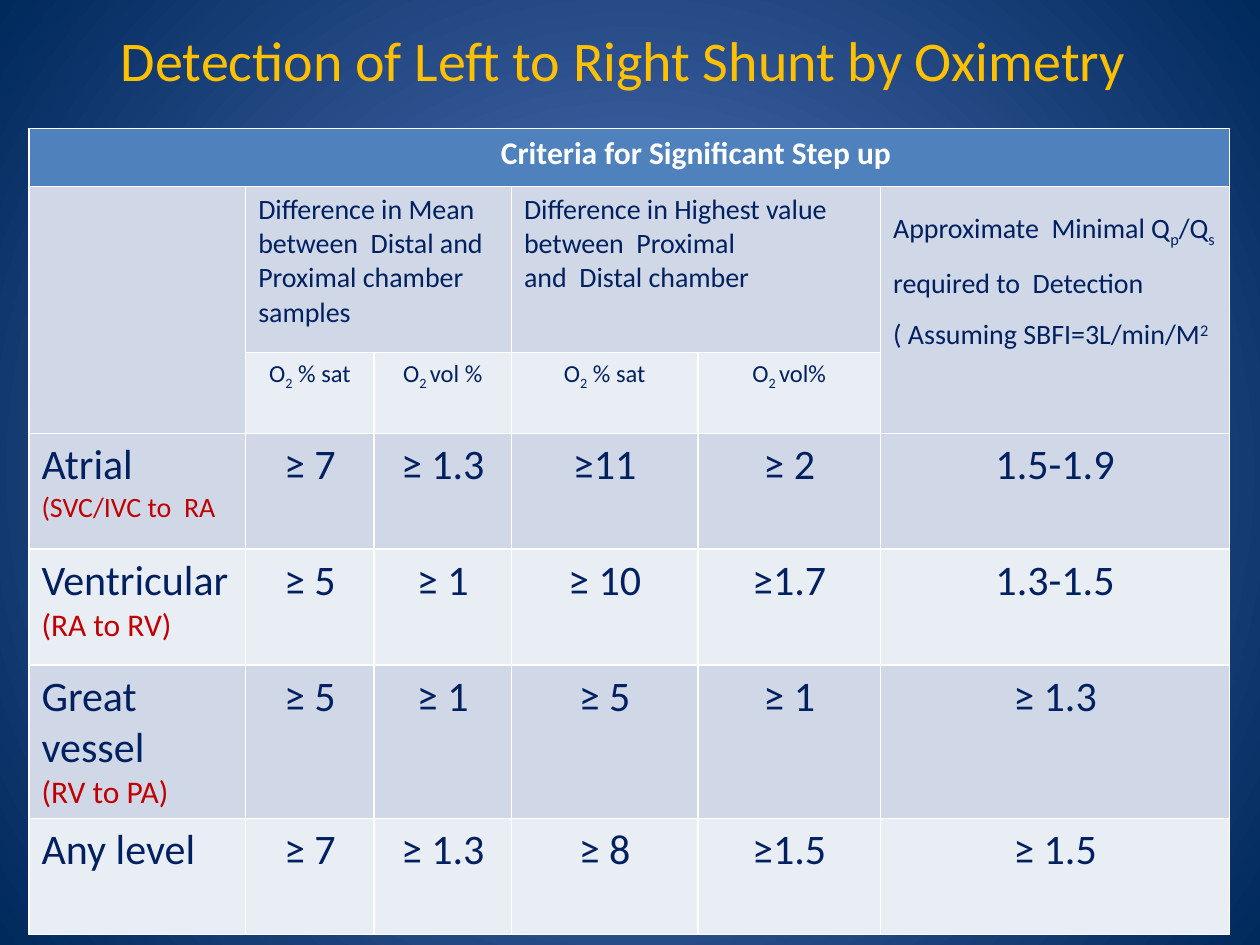
from typing import NamedTuple

from lxml import etree
from pptx import Presentation
from pptx import util as u
from pptx.dml.color import RGBColor
from pptx.enum import text as t
from pptx.oxml.ns import qn

NAVY, RED, GOLD, WHITE = "002060", "C00000", "FFC000", "FFFFFF"
BLUE, DARK, PALE = "4F81BD", "D0D8E8", "E9EDF4"
LEFT, MID = t.PP_ALIGN.LEFT, t.PP_ALIGN.CENTER
SHIFT = {"_": "-25000", "^": "30000"}
COLS = [1.72, 1.02, 1.09, 1.48, 1.45, 2.77]
ROWS = [0.46, 1.32, 0.64] + [0.92] * 4


class Head(NamedTuple):
    row: int
    col: int
    down: int
    across: int
    lines: list[str]
    gap: float = 1.0


class Level(NamedTuple):
    name: str
    path_note: str
    size: int
    values: list[str]


HEADS = [
    Head(1, 0, 2, 1, []),
    Head(1, 1, 1, 2, ["Difference in Mean between  Distal and Proximal chamber samples"]),
    Head(1, 3, 1, 2, ["Difference in Highest value between  Proximal",
                      "and  Distal chamber"]),
    Head(1, 5, 2, 1, ["Approximate  Minimal Q|_p|/Q|_s |required to  Detection",
                      "( Assuming SBFI=3L/min/M|^2"], 1.5),
]
UNITS = ["O|_2| % sat", "O|_2 |vol %", "O|_2| % sat", "O|_2 |vol%"]
LEVELS = [
    Level("Atrial", "(SVC/IVC to  RA", 16, ["≥ 7", "≥ 1.3", "≥11", "≥ 2", "1.5-1.9"]),
    Level("Ventricular", "(RA to RV)", 18, ["≥ 5", "≥ 1", "≥ 10", "≥1.7", "1.3-1.5"]),
    Level("Great vessel", "(RV to PA)", 18, ["≥ 5", "≥ 1", "≥ 5", "≥ 1", "≥ 1.3"]),
    Level("Any level", "", 18, ["≥ 7", "≥ 1.3", "≥ 8", "≥1.5", "≥ 1.5"]),
]


def rgb(code: str) -> RGBColor:
    return RGBColor.from_string(code)


def write(frame, line: str, *, size: int, color: str = NAVY, align=LEFT,
          bold: bool = False, gap: float = 1.0) -> None:
    """Add a paragraph; "|" parts runs, "_" lowers a run and "^" raises it."""
    para = frame.paragraphs[0]
    if para.runs:
        para = frame.add_paragraph()
    para.alignment, para.line_spacing = align, gap
    for part in line.split("|"):
        run = para.add_run()
        run.text = part.lstrip("_^")
        font = run.font
        font.name, font.size, font.bold = "Calibri", u.Pt(size), bold
        font.color.rgb = rgb(color)
        if part[0] in SHIFT:
            font._element.set("baseline", SHIFT[part[0]])


def paint(slide) -> None:
    """Give the slide a round gradient that is light in the centre."""
    fill = slide.background.fill
    fill.gradient()
    for stop, code in zip(fill.gradient_stops, ["5E7CC5", "00295C"]):
        stop.color.rgb = rgb(code)
    grad = next(slide.element.iter(qn("a:gradFill")))
    grad.remove(grad.find(qn("a:lin")))
    ring = etree.SubElement(grad, qn("a:path"), path="circle")
    etree.SubElement(ring, qn("a:fillToRect"),
                     {side: "50000" for side in "ltrb"})


def draw_table(slide) -> None:
    table = slide.shapes.add_table(
        len(ROWS), len(COLS), u.Inches(0.23), u.Inches(1.02),
        u.Inches(sum(COLS)), u.Inches(sum(ROWS))).table
    for col, width in zip(table.columns, COLS):
        col.width = u.Inches(width)
    for i, (row, height) in enumerate(zip(table.rows, ROWS)):
        row.height = u.Inches(height)
        for cell in row.cells:
            cell.fill.solid()
            cell.fill.fore_color.rgb = rgb(BLUE if i == 0 else DARK if i % 2 else PALE)

    top = table.cell(0, 0)
    top.merge(table.cell(0, len(COLS) - 1))
    top.margin_left = u.Inches(1.16)
    write(top.text_frame, "Criteria for Significant Step up",
          size=18, color=WHITE, align=MID, bold=True)

    for head in HEADS:
        cell = table.cell(head.row, head.col)
        cell.merge(table.cell(head.row + head.down - 1, head.col + head.across - 1))
        for line in head.lines:
            write(cell.text_frame, line, size=16, gap=head.gap)
    for j, unit in enumerate(UNITS, 1):
        write(table.cell(2, j).text_frame, unit, size=14, align=MID)

    for i, level in enumerate(LEVELS, 3):
        frame = table.cell(i, 0).text_frame
        write(frame, level.name, size=24)
        if level.path_note:
            write(frame, level.path_note, size=level.size, color=RED)
        for j, value in enumerate(level.values, 1):
            write(table.cell(i, j).text_frame, value, size=24, align=MID)


def main() -> None:
    deck = Presentation()
    deck.slide_width, deck.slide_height = u.Inches(10), u.Inches(7.5)
    slide = deck.slides.add_slide(deck.slide_layouts[5])
    paint(slide)
    title = slide.shapes.title
    title.left, title.top = u.Inches(0.5), u.Inches(0)
    title.width, title.height = u.Inches(9), u.Inches(0.94)
    title.text_frame.vertical_anchor = t.MSO_ANCHOR.MIDDLE
    write(title.text_frame, "Detection of Left to Right Shunt by Oximetry ",
          size=32, color=GOLD, align=MID)
    draw_table(slide)
    deck.save("out.pptx")


if __name__ == "__main__":
    main()
